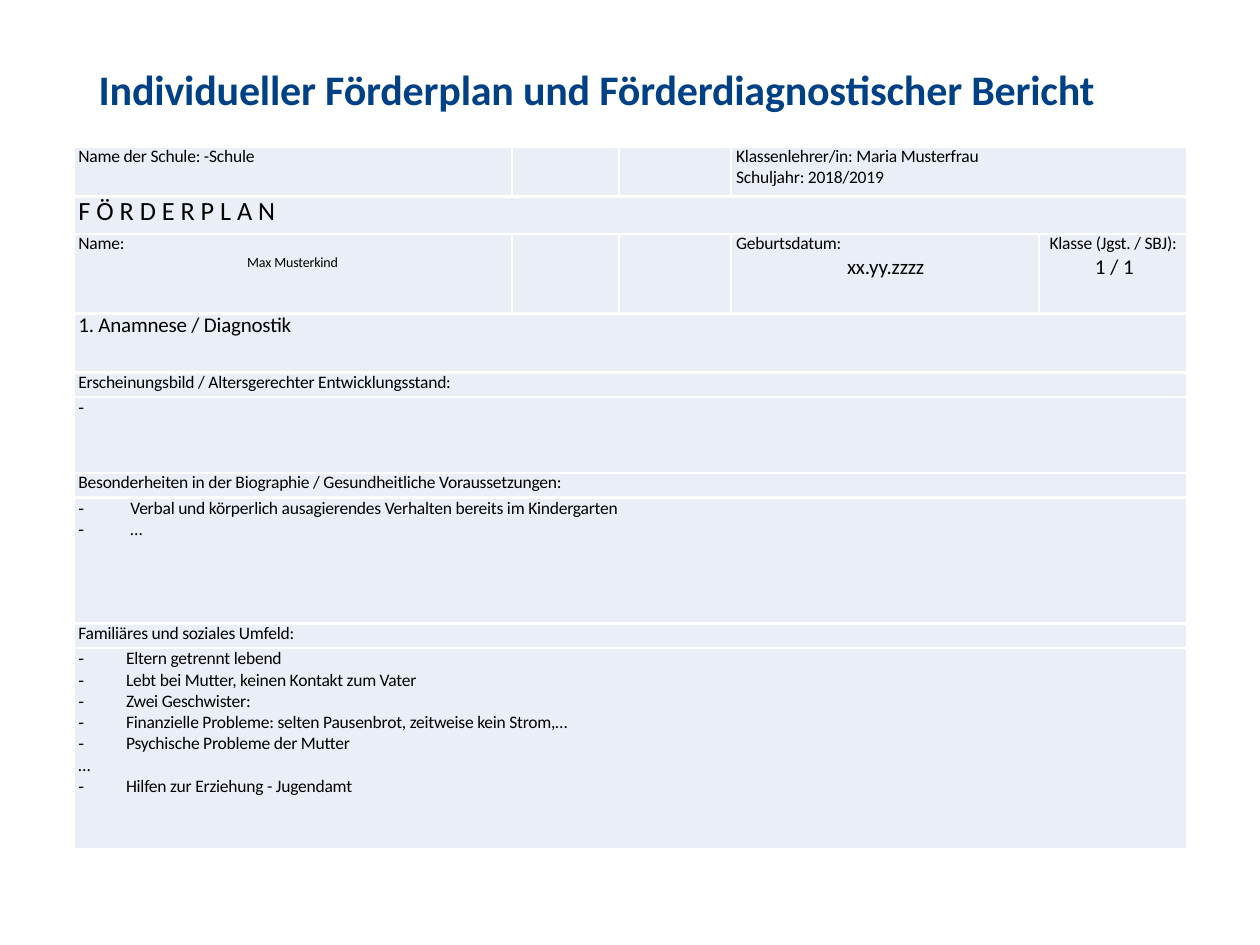
import pptx
import pptx.dml.color
import pptx.enum.text
import pptx.oxml
import pptx.oxml.ns
import pptx.util
from pptx.util import Cm

TITLE_BLUE = pptx.dml.color.RGBColor(0x00, 0x41, 0x85)
BLACK = pptx.dml.color.RGBColor(0x00, 0x00, 0x00)
CELL_FILL = pptx.dml.color.RGBColor(0xEA, 0xEF, 0xF7)
BORDER = pptx.dml.color.RGBColor(0xFF, 0xFF, 0xFF)
LEFT = pptx.enum.text.PP_ALIGN.LEFT
CENTER = pptx.enum.text.PP_ALIGN.CENTER

COLUMN_WIDTHS = [8.84, 2.16, 2.26, 6.2, 3.0]
ROW_HEIGHTS = [0.99, 0.76, 1.6, 1.19, 0.5, 1.52, 0.5, 2.54, 0.5, 4.04]
LAST_COLUMN = len(COLUMN_WIDTHS) - 1
DASH_HANGING = 0.96

BIOGRAPHY = [
    "Verbal und körperlich ausagierendes Verhalten bereits im Kindergarten",
    "…",
]
FAMILY = [
    "Eltern getrennt lebend",
    "Lebt bei Mutter, keinen Kontakt zum Vater",
    "Zwei Geschwister:",
    "Finanzielle Probleme: selten Pausenbrot, zeitweise kein Strom,…",
    "Psychische Probleme der Mutter",
]


def write(paragraph, text, size=10, font="Calibri", color=BLACK, bold=False,
          align=LEFT, indent=0.1, hanging=0, line=None, tracking=-0.1):
    """Fill a paragraph; a hanging indent in cm makes it a dash item."""
    properties = paragraph._p.get_or_add_pPr()
    properties.set("marL", str(Cm(indent + hanging)))
    properties.set("indent", str(-Cm(hanging)))
    if hanging:
        namespace = pptx.oxml.ns.nsdecls("a")
        properties.append(pptx.oxml.parse_xml(f'<a:buFont {namespace} typeface="Arial"/>'))
        properties.append(pptx.oxml.parse_xml(f'<a:buChar {namespace} char="-"/>'))
    paragraph.alignment = align
    if line:
        paragraph.line_spacing = pptx.util.Pt(line)
    run = paragraph.add_run()
    run.text = text
    run.font.name = font
    run.font.size = pptx.util.Pt(size)
    run.font.bold = bold
    run.font.color.rgb = color
    run._r.get_or_add_rPr().set("spc", str(round(tracking * 100)))


def add_title(slide):
    title = slide.shapes.title
    title.left, title.top, title.width, title.height = Cm(1.96), Cm(1.32), Cm(20.42), Cm(1.04)
    frame = title.text_frame
    frame.margin_left = frame.margin_top = frame.margin_right = frame.margin_bottom = 0
    frame.vertical_anchor = pptx.enum.text.MSO_ANCHOR.TOP
    frame.auto_size = pptx.enum.text.MSO_AUTO_SIZE.NONE
    frame.word_wrap = True
    write(frame.paragraphs[0], "Individueller Förderplan und Förderdiagnostischer Bericht",
          size=24, color=TITLE_BLUE, bold=True, indent=0.03, line=27.8)


def style_cell(cell):
    cell.margin_left = cell.margin_top = cell.margin_right = cell.margin_bottom = 0
    properties = cell._tc.get_or_add_tcPr()
    for edge in ("lnL", "lnR", "lnT", "lnB"):
        properties.append(pptx.oxml.parse_xml(
            f'<a:{edge} {pptx.oxml.ns.nsdecls("a")} w="{pptx.util.Pt(1.5)}">'
            f'<a:solidFill><a:srgbClr val="{BORDER}"/></a:solidFill></a:{edge}>'))
    cell.fill.solid()
    cell.fill.fore_color.rgb = CELL_FILL


def fill_cell(cell, *lines):
    """Write one paragraph per (text, format) pair."""
    frame = cell.text_frame
    for number, (text, text_format) in enumerate(lines):
        paragraph = frame.add_paragraph() if number else frame.paragraphs[0]
        write(paragraph, text, **text_format)


def add_plan_table(slide):
    table = slide.shapes.add_table(
        len(ROW_HEIGHTS), len(COLUMN_WIDTHS), Cm(1.48), Cm(2.97),
        Cm(sum(COLUMN_WIDTHS)), Cm(sum(ROW_HEIGHTS))).table
    table.first_row = table.horz_banding = False
    for column, width in zip(table.columns, COLUMN_WIDTHS):
        column.width = Cm(width)
    for row, height in zip(table.rows, ROW_HEIGHTS):
        row.height = Cm(height)
    for cell in table.iter_cells():
        style_cell(cell)
    return table


def fill_pupil_details(table):
    table.cell(0, 3).merge(table.cell(0, LAST_COLUMN))
    label = {"line": 11.6}
    fill_cell(table.cell(0, 0), ("Name der Schule: -Schule", {"line": 11.3}))
    fill_cell(table.cell(0, 3),
              ("Klassenlehrer/in: Maria Musterfrau", {"line": 11.3}),
              ("Schuljahr: 2018/2019", {}))
    fill_cell(table.cell(2, 0), ("Name:", label),
              ("Max Musterkind", {"size": 8, "align": CENTER, "indent": 0}))
    fill_cell(table.cell(2, 3), ("Geburtsdatum:", label),
              ("xx.yy.zzzz", {"size": 12, "align": CENTER, "indent": 0.03}))
    fill_cell(table.cell(2, 4),
              ("Klasse (Jgst. / SBJ):", {**label, "align": CENTER, "indent": 0}),
              ("1 / 1", {"size": 12, "align": CENTER, "indent": 0.05, "tracking": 0}))


def fill_sections(table):
    heading = {"line": 11.7}
    dash_item = {"hanging": DASH_HANGING}
    sections = {
        1: [("F Ö R D E R P L A N", {"size": 15, "line": 17.7, "tracking": 0})],
        3: [("1. Anamnese / Diagnostik", {"size": 12, "line": 14.1})],
        4: [("Erscheinungsbild / Altersgerechter Entwicklungsstand:", heading)],
        5: [("-", {"font": "Arial", "line": 11.3})],
        6: [("Besonderheiten in der Biographie / Gesundheitliche Voraussetzungen:", heading)],
        7: [(text, {"hanging": 1.05}) for text in BIOGRAPHY],
        8: [("Familiäres und soziales Umfeld:", heading)],
        9: [(text, dash_item) for text in FAMILY]
           + [("…", {}), ("Hilfen zur Erziehung - Jugendamt", dash_item)],
    }
    for row, lines in sections.items():
        table.cell(row, 0).merge(table.cell(row, LAST_COLUMN))
        fill_cell(table.cell(row, 0), *lines)


def main():
    presentation = pptx.Presentation()
    presentation.slide_width, presentation.slide_height = Cm(25.4), Cm(19.05)
    slide = presentation.slides.add_slide(presentation.slide_layouts[5])
    add_title(slide)
    table = add_plan_table(slide)
    fill_pupil_details(table)
    fill_sections(table)
    presentation.save("out.pptx")


if __name__ == "__main__":
    main()
